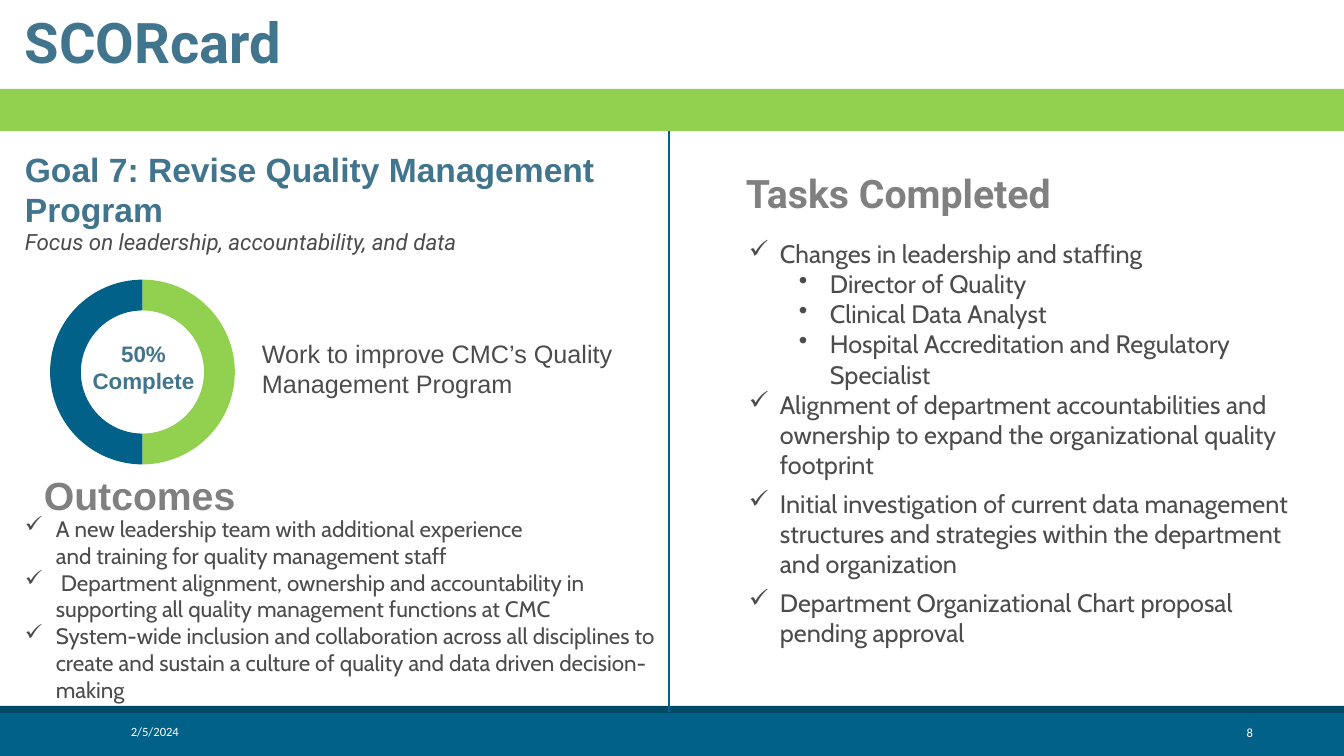
"""Build the SCORcard slide on the quality management goal."""
import pptx
import pptx.chart.data
import pptx.dml.color
import pptx.enum.chart
import pptx.enum.shapes
import pptx.enum.text
import pptx.util
from lxml import etree
from pptx.oxml import ns

THEME = {
    "slate": "41748D", "gray": "808080", "ink": "4C4C4C", "white": "FFFFFF",
    "green": "92D050", "blue": "016188", "navy": "014A67",
    "title": 40, "head": 28, "goal": 24, "body": 18, "small": 16, "foot": 9,
    "label": 10, "rule": 1,
}
BARS = [
    ((0, 712, 1344, 44), "blue"),
    ((0, 706, 1344, 7), "navy"),
    ((0, 89, 1344, 42), "green"),
]
BOXES = [
    ((1060, 720, 203, 25), ["8"],
     dict(size="foot", face="Calibri", color="white", align="RIGHT", mid=True)),
    ((121, 712, 272, 40), ["2/5/2024"],
     dict(size="foot", face="Calibri", color="white", mid=True, grow=False)),
    ((78, 335, 131, 65), ["50%", "Complete"],
     dict(size="small", color="slate", bold=True, align="CENTER", mid=True)),
    ((252, 333, 373, 72), ["Work to improve CMC’s Quality Management Program"], {}),
    ((15, 3, 280, 78), ["SCORcard"],
     dict(size="title", face="Roboto", color="slate", bold=True, wrap=False)),
    ((15, 223, 578, 37), ["Focus on leadership, accountability, and data"],
     dict(size="small", face="Roboto", italic=True)),
    ((15, 144, 674, 92), ["Goal 7: Revise Quality Management Program"],
     dict(size="goal", color="slate", bold=True)),
    ((736, 164, 420, 57), ["Tasks Completed"],
     dict(size="head", face="Roboto", color="gray", bold=True)),
    ((34, 466, 522, 57), ["Outcomes"],
     dict(size="head", color="gray", bold=True)),
]
TASKS = [
    ("Changes in leadership and staffing", 0, 0),
    ("Director of Quality", 1, 0),
    ("Clinical Data Analyst", 1, 0),
    ("Hospital Accreditation and Regulatory Specialist", 1, 0),
    ("Alignment of department accountabilities and ownership to expand "
     "the organizational quality footprint", 0, 6),
    ("Initial investigation of current data management structures and "
     "strategies within the department and organization", 0, 6),
    ("Department Organizational Chart proposal pending approval", 0, 6),
]
GAINS = [
    ("A new leadership team with additional experience \n"
     "and training for quality management staff", 0, 0),
    (" Department alignment, ownership and accountability in supporting "
     "all quality management functions at CMC", 0, 0),
    ("System-wide inclusion and collaboration across all disciplines to create "
     "and sustain a culture of quality and data driven decision-making", 0, 0),
]
LISTS = [
    ((739, 233, 577, 463), TASKS, dict(face="Cabin")),
    ((15, 510, 656, 228), GAINS, dict(size="small", face="Cabin")),
]
MARKS = "✓•"
HANG, STEP = 31, 50
RING = (27, 256, 210, 215)
PLOT = {"x": 0.11, "y": 0.11, "w": 0.88, "h": 0.92}
CATS = ["1", "2", "3", "4"]
DATA = {"Series 1": [0, 0, None, None], "Series 2": [50, 50, None, None]}
HUES = ["green", "blue"]
RULE = (669, 712, 669, 131)
SCALE = 914400 / 100.8


def emu(*nums):
    return [round(n * SCALE) for n in nums]


def rgb(name):
    return pptx.dml.color.RGBColor.from_string(THEME[name])


def style(font, size, face, color, bold=False, italic=False):
    font.size = pptx.util.Pt(THEME[size])
    font.name = face
    font.color.rgb = rgb(color)
    font.bold, font.italic = bold, italic


def bullet(para, level):
    para.level = level
    props = para._p.get_or_add_pPr()
    left, hang = emu(HANG + STEP * level, HANG)
    props.set("marL", str(left))
    props.set("indent", str(-hang))
    etree.SubElement(props, ns.qn("a:buChar")).set("char", MARKS[level])


def write(slide, area, lines, size="body", face="Arial", color="ink", bold=False,
          italic=False, align="LEFT", mid=False, wrap=True, grow=True):
    enum = pptx.enum.text
    frame = slide.shapes.add_textbox(*emu(*area)).text_frame
    frame.word_wrap = wrap
    if grow:
        frame.auto_size = enum.MSO_AUTO_SIZE.SHAPE_TO_FIT_TEXT
    if mid:
        frame.vertical_anchor = enum.MSO_ANCHOR.MIDDLE
    for i, line in enumerate(lines):
        para = frame.add_paragraph() if i else frame.paragraphs[0]
        para.alignment = getattr(enum.PP_ALIGN, align)
        if isinstance(line, tuple):
            line, level, after = line
            para.space_after = pptx.util.Pt(after)
            bullet(para, level)
        para.text = line
        for run in para.runs:
            style(run.font, size, face, color, bold, italic)
        for stop in para._p.findall(ns.qn("a:br")):
            mark = etree.SubElement(stop, ns.qn("a:rPr"))
            mark.set("sz", str(THEME[size] * 100))


def bar(slide, area, color):
    kind = pptx.enum.shapes.MSO_SHAPE.RECTANGLE
    shape = slide.shapes.add_shape(kind, *emu(*area))
    shape.shadow.inherit = False
    shape.fill.solid()
    shape.fill.fore_color.rgb = rgb(color)
    shape.line.fill.background()


def ring(slide):
    data = pptx.chart.data.CategoryChartData()
    data.categories = CATS
    for name, vals in DATA.items():
        data.add_series(name, vals)
    kind = pptx.enum.chart.XL_CHART_TYPE.DOUGHNUT
    chart = slide.shapes.add_chart(kind, *emu(*RING), data).chart
    chart.has_legend = chart.has_title = False
    style(chart.font, "label", "Calibri", "ink")
    plot = chart.plots[0]
    plot.vary_by_categories = True
    for series in plot.series:
        for i, hue in enumerate(HUES):
            part = series.points[i].format
            part.fill.solid()
            part.fill.fore_color.rgb = rgb(hue)
            part.line.fill.background()
    area = chart._chartSpace.chart.plotArea
    for old in area.findall(ns.qn("c:layout")):
        area.remove(old)
    layout = etree.Element(ns.qn("c:layout"))
    area.insert(0, layout)
    manual = etree.SubElement(layout, ns.qn("c:manualLayout"))
    rows = [("layoutTarget", "inner"), ("xMode", "edge"), ("yMode", "edge")]
    for tag, val in rows + list(PLOT.items()):
        etree.SubElement(manual, ns.qn("c:" + tag)).set("val", str(val))


def rule(slide):
    kind = pptx.enum.shapes.MSO_CONNECTOR.STRAIGHT
    line = slide.shapes.add_connector(kind, *emu(*RULE))
    line.line.color.rgb = rgb("blue")
    line.line.width = pptx.util.Pt(THEME["rule"])
    etree.SubElement(line._element.spPr, ns.qn("a:effectLst"))


def main():
    deck = pptx.Presentation()
    deck.slide_width, deck.slide_height = emu(1344, 756)
    slide = deck.slides.add_slide(deck.slide_layouts[6])
    for area, color in BARS:
        bar(slide, area, color)
    ring(slide)
    for area, lines, form in BOXES + LISTS:
        write(slide, area, lines, **form)
    rule(slide)
    deck.save("out.pptx")


if __name__ == "__main__":
    main()
